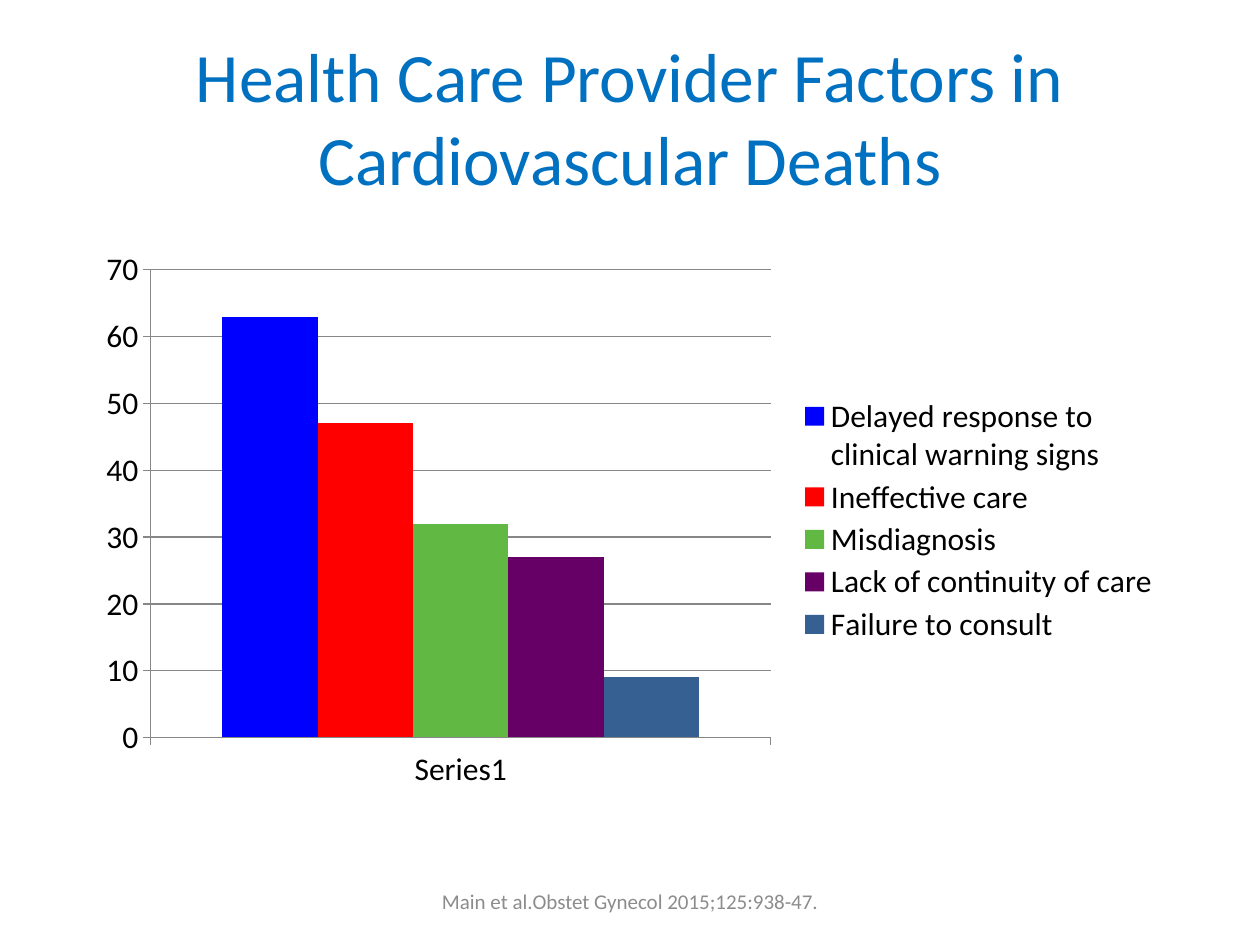
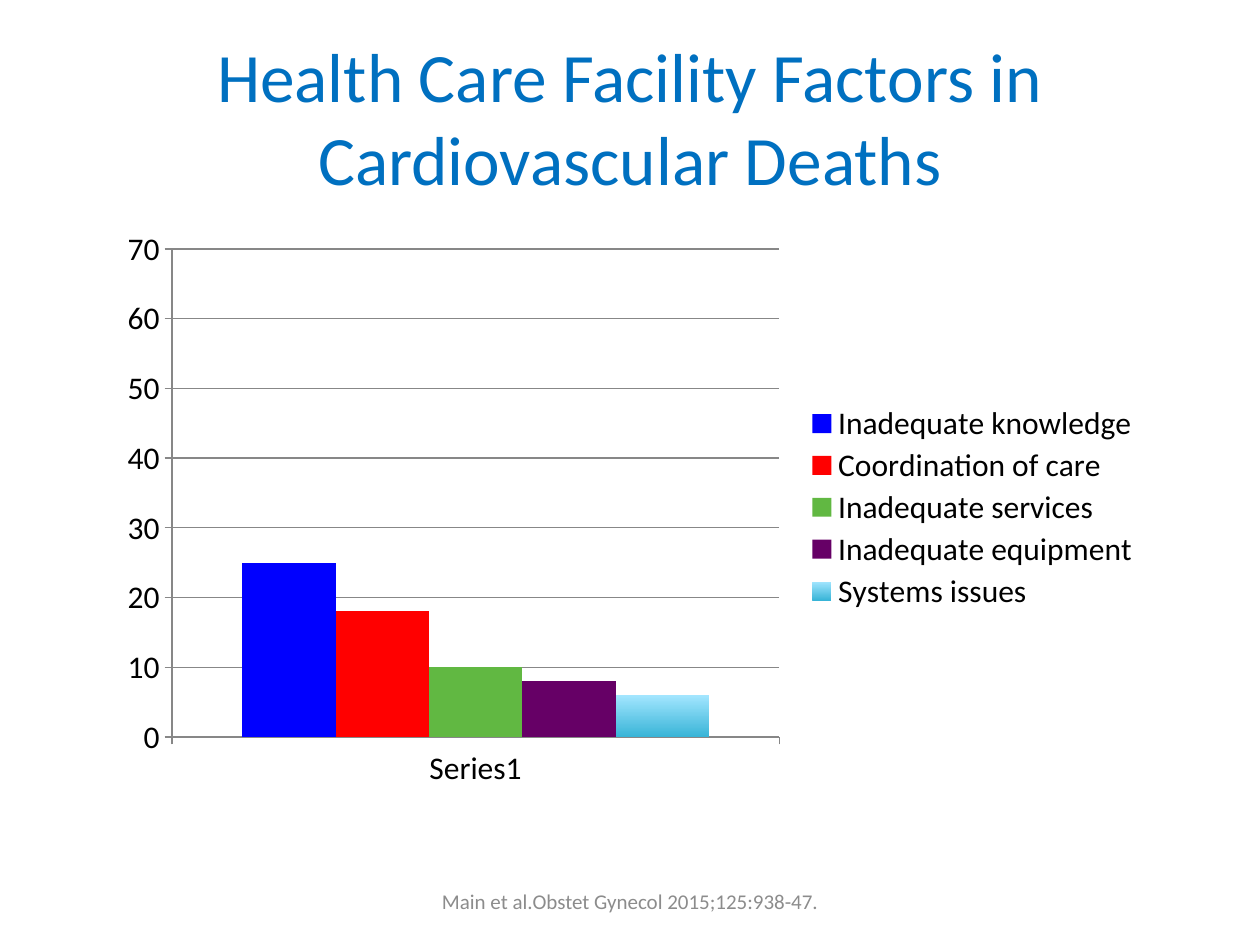
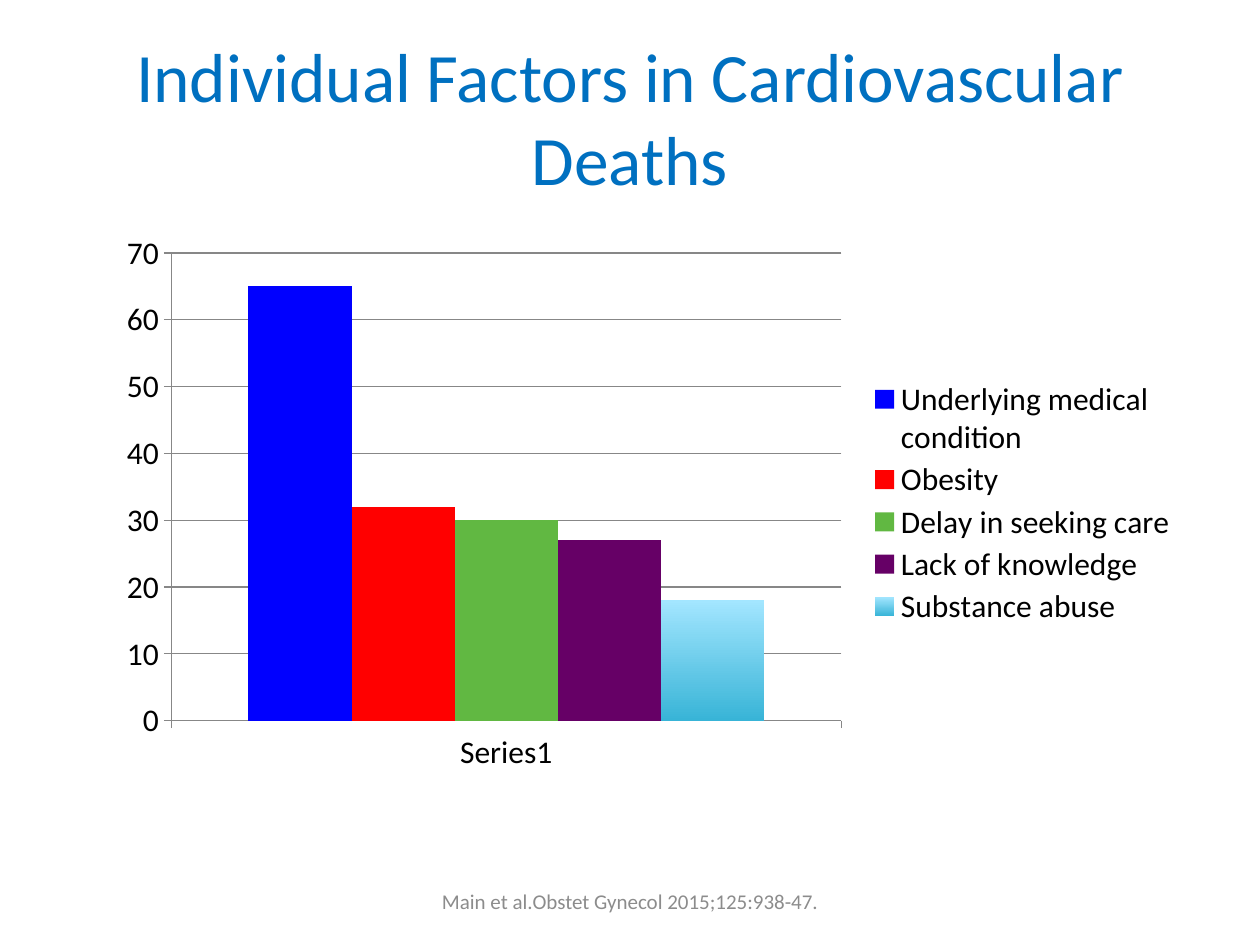
from dataclasses import dataclass
from typing import Any

from lxml.etree import SubElement
from pptx import Presentation
from pptx.chart.data import CategoryChartData
from pptx.dml.color import RGBColor
from pptx.enum.chart import XL_CHART_TYPE as ChartType
from pptx.enum.chart import XL_LEGEND_POSITION as LegendPosition
from pptx.enum.chart import XL_TICK_MARK as TickMark
from pptx.enum.text import MSO_ANCHOR as Anchor
from pptx.enum.text import PP_ALIGN as Align
from pptx.oxml.ns import qn
from pptx.util import Cm, Pt

# Shared style
FONT = "Calibri"
COLORS = {
    "title": "0070C0",
    "footer": "8C8C8C",
    "text": "000000",
    "grid": "878787",
    "blue": "0000FF",
    "red": "FF0000",
    "green": "61B842",
    "purple": "660066",
    "steel": "376092",
    "aqua_light": "A3E6FF",
    "aqua_dark": "38B4D7",
}
BAR_COLORS = ["blue", "red", "green", "purple"]
CITATION = "Main et al.Obstet Gynecol 2015;125:938-47."


@dataclass(frozen=True)
class Box:
    """Position and size in centimetres."""
    left: float
    top: float
    width: float
    height: float

    def lengths(self) -> tuple[Cm, Cm, Cm, Cm]:
        return Cm(self.left), Cm(self.top), Cm(self.width), Cm(self.height)


@dataclass(frozen=True)
class TextStyle:
    box: Box
    size: float
    color: str


@dataclass(frozen=True)
class FactorSlide:
    title: str
    frame: Box
    plot: Box
    legend: Box
    factors: dict[str, int]
    last_fill: tuple[str, ...]


TITLE = TextStyle(Box(1.27, 0.76, 22.86, 3.18), 39.6, "title")
FOOTER = TextStyle(Box(8.41, 17.65, 8.59, 1.02), 12, "footer")
AQUA = ("aqua_light", "aqua_dark")

SLIDES = [
    FactorSlide(
        "Health Care Provider Factors in Cardiovascular Deaths",
        Box(1.7, 4.83, 21.89, 11.28),
        Box(3.04, 5.44, 12.5, 9.43),
        Box(16.07, 7.92, 7.32, 5.14),
        {"Delayed response to clinical warning signs": 63, "Ineffective care": 47,
         "Misdiagnosis": 32, "Lack of continuity of care": 27, "Failure to consult": 9},
        ("steel",),
    ),
    FactorSlide(
        "Health Care Facility Factors in Cardiovascular Deaths",
        Box(2.13, 4.39, 21.06, 11.71),
        Box(3.47, 5.02, 12.24, 9.84),
        Box(16.2, 8.08, 6.8, 4.3),
        {"Inadequate knowledge": 25, "Coordination of care": 18,
         "Inadequate services": 10, "Inadequate equipment": 8, "Systems issues": 6},
        AQUA,
    ),
    FactorSlide(
        "Individual Factors in Cardiovascular Deaths",
        Box(2.11, 4.47, 21.84, 11.28),
        Box(3.45, 5.1, 13.51, 9.43),
        Box(17.46, 7.58, 6.3, 5.12),
        {"Underlying medical condition": 65, "Obesity": 32,
         "Delay in seeking care": 30, "Lack of knowledge": 27, "Substance abuse": 18},
        AQUA,
    ),
]


def rgb(name: str) -> RGBColor:
    return RGBColor.from_string(COLORS[name])


def set_values(target: Any, values: dict[str, Any]) -> None:
    for name, value in values.items():
        setattr(target, name, value)


def style_font(font: Any, size: float, color: str) -> None:
    set_values(font, {"name": FONT, "size": Pt(size), "bold": False})
    font.color.rgb = rgb(color)


def add_text(slide: Any, text: str, style: TextStyle) -> None:
    frame = slide.shapes.add_textbox(*style.box.lengths()).text_frame
    set_values(frame, {"word_wrap": True, "vertical_anchor": Anchor.MIDDLE})
    paragraph = frame.paragraphs[0]
    paragraph.alignment = Align.CENTER
    run = paragraph.add_run()
    run.text = text
    style_font(run.font, style.size, style.color)


def place_in_chart(parent: Any, index: int, box: Box, frame: Box, inner: bool) -> None:
    """Give a chart part a fixed place, as fractions of the chart frame."""
    for old_layout in parent.findall(qn("c:layout")):
        parent.remove(old_layout)
    layout = SubElement(parent, qn("c:layout"))
    parent.insert(index, layout)
    manual = SubElement(layout, qn("c:manualLayout"))
    values = {"layoutTarget": "inner"} if inner else {}
    values |= {
        "xMode": "edge",
        "yMode": "edge",
        "x": f"{(box.left - frame.left) / frame.width:.4f}",
        "y": f"{(box.top - frame.top) / frame.height:.4f}",
        "w": f"{box.width / frame.width:.4f}",
        "h": f"{box.height / frame.height:.4f}",
    }
    for name, value in values.items():
        SubElement(manual, qn(f"c:{name}")).set("val", value)


def fill_bar(fill: Any, names: tuple[str, ...]) -> None:
    if len(names) == 1:
        fill.solid()
        fill.fore_color.rgb = rgb(names[0])
        return
    fill.gradient()
    fill.gradient_angle = 270
    for stop, name in zip(fill.gradient_stops, names):
        stop.color.rgb = rgb(name)


def style_line(line: Any) -> None:
    line.color.rgb = rgb("grid")
    line.width = Pt(0.75)


def add_factor_chart(slide: Any, content: FactorSlide) -> None:
    data = CategoryChartData(number_format="0")
    data.categories = ["Series1"]
    for name, value in content.factors.items():
        data.add_series(name, [value])
    chart = slide.shapes.add_chart(
        ChartType.COLUMN_CLUSTERED, *content.frame.lengths(), data).chart
    set_values(chart, {"has_title": False, "has_legend": True})
    style_font(chart.font, 18, "text")

    # Bars
    plot = chart.plots[0]
    set_values(plot, {"gap_width": 150, "overlap": 0, "vary_by_categories": False})
    fills = [(name,) for name in BAR_COLORS] + [content.last_fill]
    for series, names in zip(plot.series, fills):
        series.invert_if_negative = False
        fill_bar(series.format.fill, names)

    # Axes
    value_axis = chart.value_axis
    set_values(value_axis, {"minimum_scale": 0, "maximum_scale": 70, "major_unit": 10,
                            "has_major_gridlines": True})
    set_values(value_axis.tick_labels,
               {"number_format": "0", "number_format_is_linked": False})
    style_line(value_axis.major_gridlines.format.line)
    for axis in (value_axis, chart.category_axis):
        set_values(axis, {"major_tick_mark": TickMark.OUTSIDE,
                          "minor_tick_mark": TickMark.NONE})
        style_line(axis.format.line)

    # Legend and plot area
    set_values(chart.legend, {"position": LegendPosition.RIGHT,
                              "include_in_layout": False})
    chart_root = chart.element.find(qn("c:chart"))
    place_in_chart(chart_root.find(qn("c:plotArea")), 0,
                   content.plot, content.frame, inner=True)
    place_in_chart(chart_root.find(qn("c:legend")), 1,
                   content.legend, content.frame, inner=False)


def main() -> None:
    presentation = Presentation()
    set_values(presentation, {"slide_width": Cm(25.4), "slide_height": Cm(19.05)})
    blank_layout = presentation.slide_layouts[6]
    for content in SLIDES:
        slide = presentation.slides.add_slide(blank_layout)
        add_text(slide, content.title, TITLE)
        add_factor_chart(slide, content)
        add_text(slide, CITATION, FOOTER)
    presentation.save("out.pptx")


if __name__ == "__main__":
    main()
